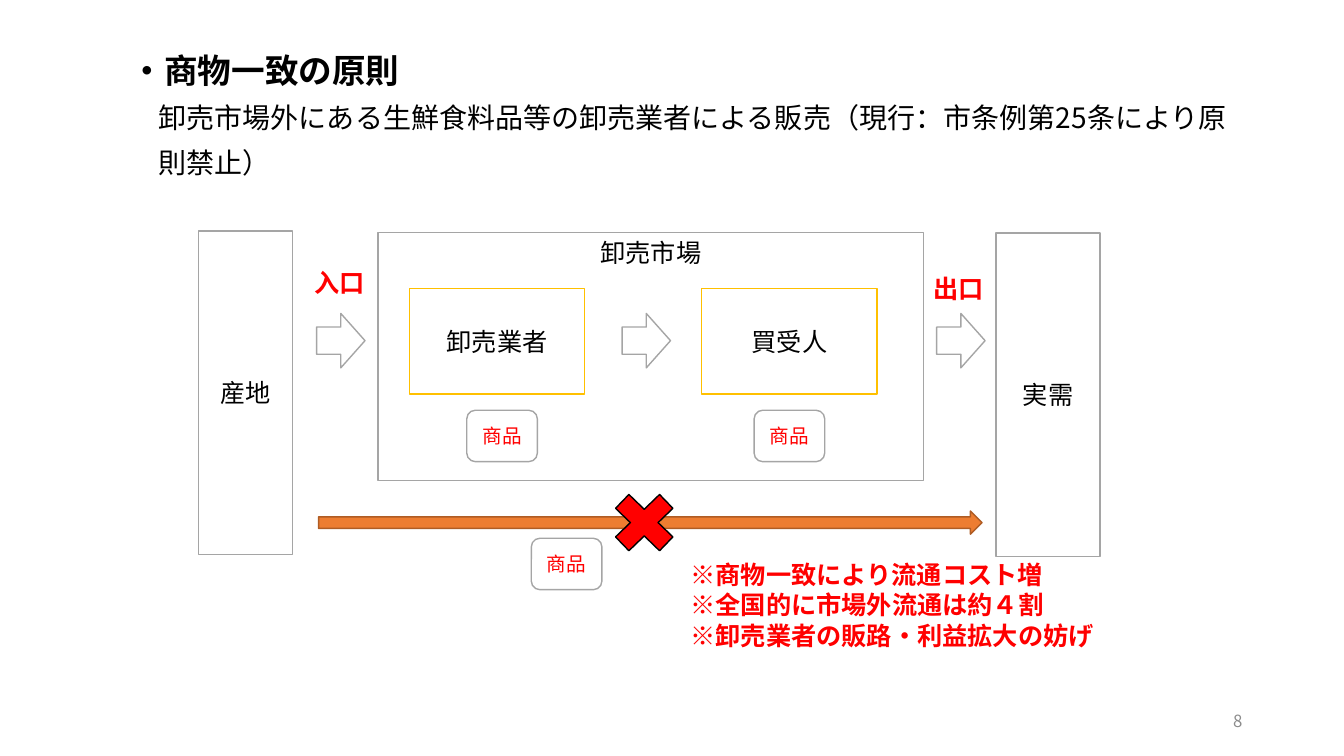
"""Build the slide on the principle that goods and trade move together."""
from pptx import Presentation
from pptx.dml.color import RGBColor
from pptx.enum.shapes import MSO_SHAPE as Shape
from pptx.enum.text import MSO_ANCHOR as Anchor, PP_ALIGN as Align
from pptx.util import Pt
from lxml.etree import SubElement
from pptx.oxml.ns import qn

PX = 9144
FONT = "Noto Sans CJK JP"
COLORS = {
    "black": "000000", "red": "FF0000", "white": "FFFFFF", "gray": "A5A5A5",
    "gold": "FFC000", "orange": "ED7D31", "brown": "AF5C24", "number": "8C8C8C",
}

deck = Presentation()
deck.slide_width, deck.slide_height = 1333 * PX, 750 * PX
slide = deck.slides.add_slide(deck.slide_layouts[6])


def write(holder, *lines, size=18, color="black", bold=False, align=Align.LEFT,
          anchor=Anchor.TOP):
    frame = holder.text_frame
    frame.word_wrap = True
    frame.vertical_anchor = anchor
    for index, line in enumerate(lines):
        paragraph = frame.paragraphs[0] if index == 0 else frame.add_paragraph()
        paragraph.alignment = align
        run = paragraph.add_run()
        run.text = line
        run.font.size, run.font.bold, run.font.name = Pt(size), bold, FONT
        run.font.color.rgb = RGBColor.from_string(COLORS[color])
        SubElement(run.font._element, qn("a:ea")).set("typeface", FONT)
    return frame


def draw(kind, box, line="gray", fill=None):
    shape = slide.shapes.add_shape(kind, *(n * PX for n in box))
    shape.shadow.inherit = False
    shape.line.color.rgb = RGBColor.from_string(COLORS[line])
    shape.line.width = Pt(1)
    if fill:
        shape.fill.solid()
        shape.fill.fore_color.rgb = RGBColor.from_string(COLORS[fill])
    else:
        shape.fill.background()
    return shape


page_number = slide.shapes.add_textbox(942 * PX, 695 * PX, 300 * PX, 40 * PX)
write(page_number, "8", size=12, color="number", align=Align.RIGHT, anchor=Anchor.MIDDLE)

heading = slide.shapes.add_textbox(92 * PX, 49 * PX, 1160 * PX, 140 * PX)
principle = write(
    heading,
    "・商物一致の原則",
    "卸売市場外にある生鮮食料品等の卸売業者による販売（現行：市条例第25条により原",
    "則禁止）",
    size=20,
)
for paragraph, indent in zip(principle.paragraphs, (20, 40, 40)):
    paragraph.line_spacing = 0.9
    paragraph.space_before = Pt(10)
    paragraph._p.get_or_add_pPr().set("marL", str(Pt(indent)))
title = principle.paragraphs[0].runs[0].font
title.size, title.bold = Pt(24), True

draw(Shape.RIGHT_ARROW, (316, 507, 658, 23), line="brown", fill="orange")
draw(Shape.MATH_MULTIPLY, (597, 478, 84, 81), line="black", fill="red")

for party, box, line, anchor in (
    ("卸売市場", (375, 231, 541, 246), "gray", Anchor.TOP),
    ("産地", (197, 229, 93, 321), "gray", Anchor.MIDDLE),
    ("実需", (988, 231, 103, 321), "gray", Anchor.MIDDLE),
    ("卸売業者", (406, 286, 174, 105), "gold", Anchor.MIDDLE),
    ("買受人", (696, 286, 174, 105), "gold", Anchor.MIDDLE),
):
    write(draw(Shape.RECTANGLE, box, line=line), party, align=Align.CENTER, anchor=anchor)

for left in (314, 617, 929):
    draw(Shape.RIGHT_ARROW, (left, 311, 48, 54), fill="white")

for left, top in ((463, 407), (748, 407), (527, 534)):
    goods = draw(Shape.ROUNDED_RECTANGLE, (left, top, 70, 51))
    write(goods, "商品", size=14, color="red", align=Align.CENTER, anchor=Anchor.MIDDLE)

for box, lines in (
    ((302, 260, 81, 40), ["入口"]),
    ((916, 266, 81, 40), ["出口"]),
    ((675, 550, 509, 101), [
        "※商物一致により流通コスト増",
        "※全国的に市場外流通は約４割",
        "※卸売業者の販路・利益拡大の妨げ",
    ]),
):
    note = slide.shapes.add_textbox(*(n * PX for n in box))
    write(note, *lines, color="red", bold=True)

deck.save("out.pptx")
